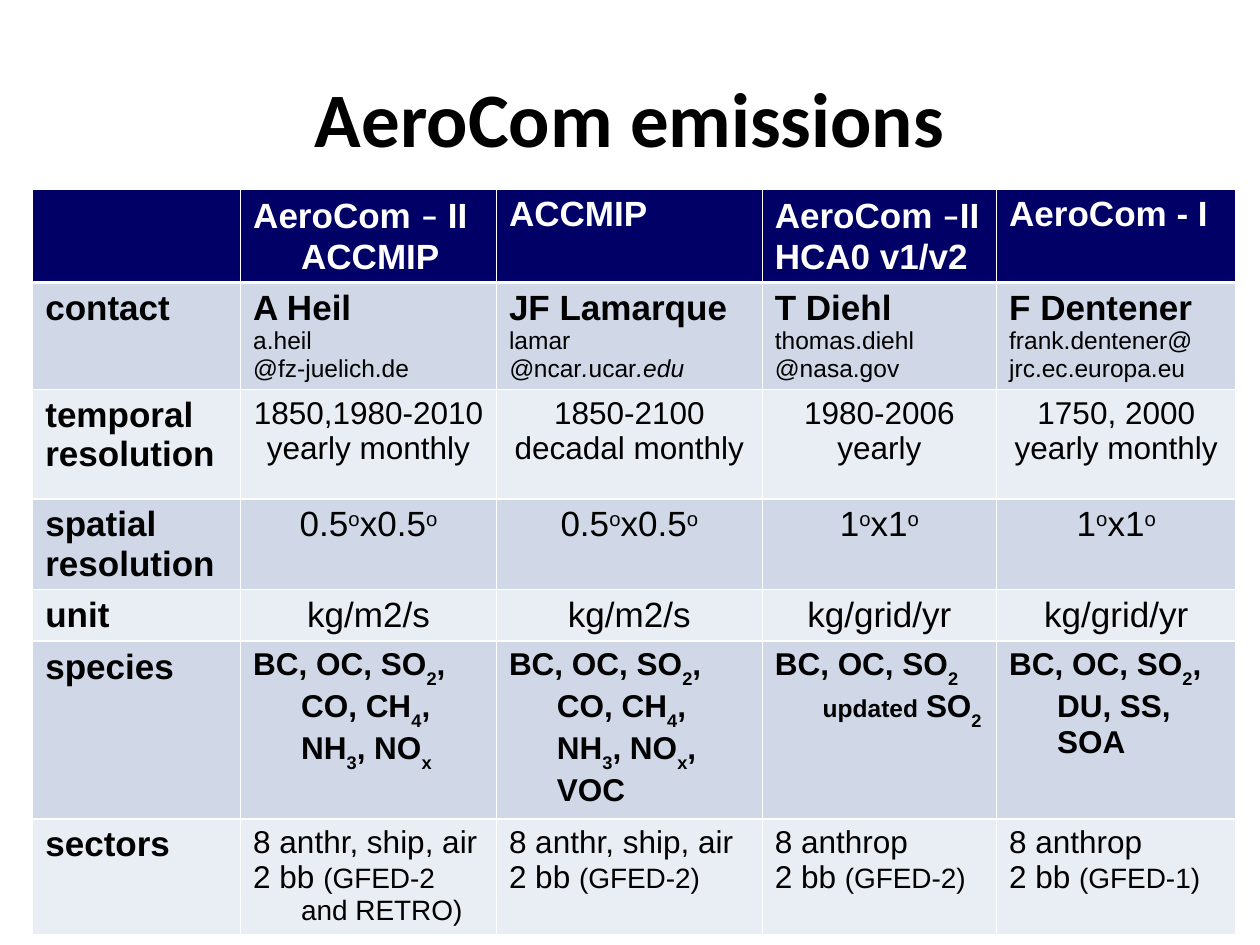
import dataclasses
import typing

import lxml.etree
import pptx
import pptx.dml.color
import pptx.enum.text
import pptx.oxml.ns
import pptx.util

Inches = pptx.util.Inches
Pt = pptx.util.Pt
ALIGN = pptx.enum.text.PP_ALIGN
BLACK, WHITE = "000000", "FFFFFF"
NAVY, BLUE, PALE = "000066", "D0D8E8", "E9EDF4"
WIDTHS = [1.65, 2.03, 2.11, 1.86, 1.9]
HEIGHTS = [0.74, 0.85, 0.87, 0.71, 0.41, 1.37, 0.92]
INDENT = 0.38


@dataclasses.dataclass
class Run:
    text: str
    size: int = 20
    bold: bool = False
    italic: bool = False
    font: str = "Arial"
    shift: int = 0


Line = list[Run]


class Cell(typing.NamedTuple):
    lines: list[Line]
    align: ALIGN = ALIGN.LEFT


def color(code: str) -> pptx.dml.color.RGBColor:
    return pptx.dml.color.RGBColor.from_string(code)


def shifted(text: str, size: int, bold: bool, shift: int) -> Line:
    parts = enumerate(text.split("|"))
    return [Run(part, size, bold, shift=shift * (i % 2)) for i, part in parts if part]


def label(*texts: str) -> Cell:
    return Cell([[Run(text, bold=True)] for text in texts])


def person(name: str, user: str, host: Line) -> Cell:
    return Cell([[Run(name, bold=True)], [Run(user, 14)], host])


def center(size: int, *texts: str) -> Cell:
    return Cell([shifted(text, size, False, 30) for text in texts], ALIGN.CENTER)


def species(text: str, *more: Run) -> Cell:
    return Cell([shifted(text, 18, True, -30) + list(more)])


def sectors(first: str, source: str) -> Cell:
    return Cell([[Run(first, 18)], [Run("2 bb ", 18), Run(source, 16)]])


def dashed(tail: str) -> Line:
    dash = Run("–", bold=True, font="Calibri")
    return [Run("AeroCom ", bold=True), dash, Run(tail, bold=True)]


def write(para: typing.Any, runs: Line, code: str, align: ALIGN) -> None:
    para.alignment = align
    for item in runs:
        run = para.add_run()
        run.text = item.text
        style = {"size": Pt(item.size), "bold": item.bold,
                 "italic": item.italic, "name": item.font}
        for key, value in style.items():
            setattr(run.font, key, value)
        run.font.color.rgb = color(code)
        if item.shift:
            run.font._element.set("baseline", str(item.shift * 1000))


def border(cell: typing.Any, widths: dict[str, int]) -> None:
    props = cell._tc.get_or_add_tcPr()
    qn = pptx.oxml.ns.qn
    for place, (side, width) in enumerate(widths.items()):
        edge = lxml.etree.Element(qn(f"a:ln{side}"), w=str(Pt(width)))
        fill = lxml.etree.SubElement(edge, qn("a:solidFill"))
        lxml.etree.SubElement(fill, qn("a:srgbClr"), val=WHITE)
        props.insert(place, edge)


def fill_cell(cell: typing.Any, data: Cell, row: int) -> None:
    cell.margin_bottom = Inches(0)
    cell.fill.solid()
    cell.fill.fore_color.rgb = color(NAVY if row == 0 else BLUE if row % 2 else PALE)
    border(cell, {"L": 1, "R": 1, "T": 2 if row == 1 else 1, "B": 2 if row == 0 else 1})
    frame = cell.text_frame
    for i, runs in enumerate(data.lines):
        para = frame.add_paragraph() if i else frame.paragraphs[0]
        props = para._p.get_or_add_pPr()
        props.set("marL", str(Inches(INDENT)))
        props.set("indent", str(Inches(-INDENT)))
        write(para, runs, BLACK if row else WHITE, data.align)


def draw_table(slide: typing.Any, rows: list[list[Cell]]) -> None:
    frame = slide.shapes.add_table(len(rows), len(WIDTHS), Inches(0.26), Inches(1.5),
                                   Inches(sum(WIDTHS)), Inches(sum(HEIGHTS)))
    table = frame.table
    table.horz_banding = False
    for col, width in zip(table.columns, WIDTHS):
        col.width = Inches(width)
    for r, (height, cells) in enumerate(zip(HEIGHTS, rows)):
        table.rows[r].height = Inches(height)
        for c, data in enumerate(cells):
            fill_cell(table.cell(r, c), data, r)


def draw_title(slide: typing.Any, text: str) -> None:
    box = slide.shapes.add_textbox(Inches(0.5), Inches(0.3), Inches(9), Inches(1.25))
    frame = box.text_frame
    frame.word_wrap = True
    frame.vertical_anchor = pptx.enum.text.MSO_ANCHOR.MIDDLE
    write(frame.paragraphs[0], [Run(text, 44, True, font="Calibri")], BLACK, ALIGN.CENTER)


NCAR = [Run(text, 14, italic=slant) for text, slant in
        [("@", True), ("ncar", False), (".", True), ("ucar", False), (".edu", True)]]
UPDATE = [Run("updated", 14, True), Run(" ", 16, True), *shifted("SO|2", 18, True, -30)]
GASES = "BC, OC, SO|2|, CO, CH|4|, NH|3|, NO|x|"

ROWS = [
    [Cell([]), Cell([dashed(" II ACCMIP")]), label("ACCMIP"),
     Cell([dashed("II"), [Run("HCA0 v1/v2", bold=True)]]), label("AeroCom - I")],
    [label("contact"),
     person("A Heil", "a.heil", [Run("@fz-juelich.de", 14)]),
     person("JF Lamarque", "lamar", NCAR),
     person("T Diehl", "thomas.diehl", [Run("@nasa.gov", 14)]),
     person("F Dentener", "frank.dentener@", [Run("jrc.ec.europa.eu", 14)])],
    [label("temporal", "resolution"),
     center(18, "1850,1980-2010", "yearly monthly"),
     center(18, "1850-2100", "decadal monthly"),
     center(18, "1980-2006", "yearly"),
     center(18, "1750, 2000", "yearly monthly")],
    [label("spatial", "resolution"),
     *[center(20, f"{step}|o|x{step}|o") for step in ("0.5", "0.5", "1", "1")]],
    [label("unit"),
     *[center(20, f"kg/{unit}") for unit in ("m2/s", "m2/s", "grid/yr", "grid/yr")]],
    [label("species"), species(GASES), species(GASES + ", VOC"),
     species("BC, OC, SO|2 ", *UPDATE), species("BC, OC, SO|2|, DU, SS, SOA")],
    [label("sectors"),
     sectors("8 anthr, ship, air", "(GFED-2 and RETRO)"),
     sectors("8 anthr, ship, air", "(GFED-2)"),
     sectors("8 anthrop", "(GFED-2)"),
     sectors("8 anthrop", "(GFED-1)")],
]


def main() -> None:
    deck = pptx.Presentation()
    deck.slide_width, deck.slide_height = Inches(10), Inches(7.5)
    slide = deck.slides.add_slide(deck.slide_layouts[6])
    draw_title(slide, "AeroCom emissions")
    draw_table(slide, ROWS)
    deck.save("out.pptx")


if __name__ == "__main__":
    main()
